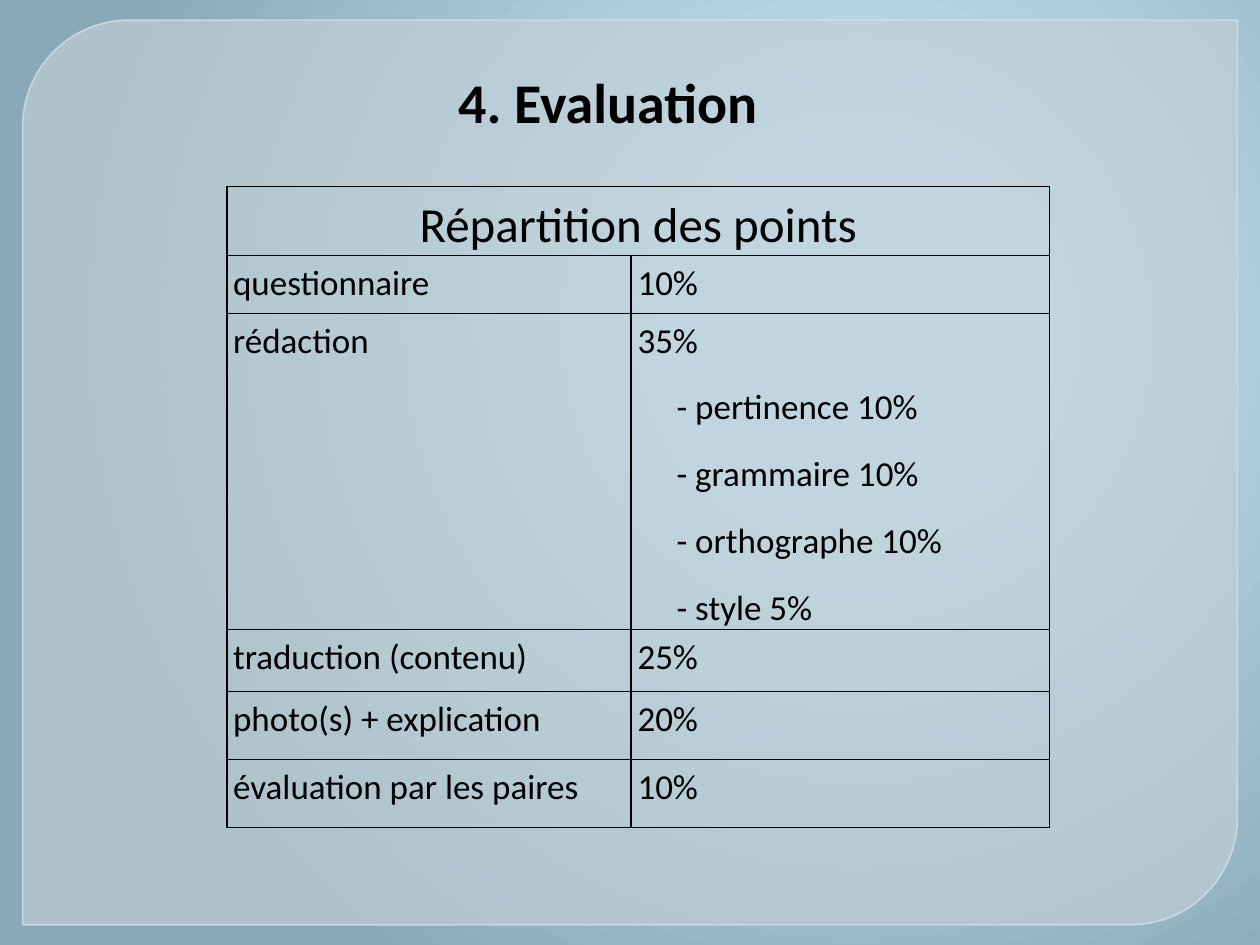
from dataclasses import dataclass

import pptx
import pptx.dml.color
import pptx.enum.shapes
import pptx.enum.text
import pptx.oxml
import pptx.oxml.ns
import pptx.util
from lxml import etree

Inches = pptx.util.Inches
Pt = pptx.util.Pt
RGB = pptx.dml.color.RGBColor.from_string
Align = pptx.enum.text.PP_ALIGN
Anchor = pptx.enum.text.MSO_ANCHOR
qn = pptx.oxml.ns.qn


@dataclass(frozen=True)
class Theme:
    font: str = "Calibri"
    ink: str = "000000"
    panel: str = "C2D0D7"
    panel_alpha: int = 65
    edge: str = "CEDEE6"
    edge_alpha: int = 88
    backdrop: tuple = ((0, "C3E4F5"), (20, "C1E1F1"), (100, "8AA9B8"))
    title_size: int = 32
    heading_size: int = 28
    body_size: int = 20


@dataclass(frozen=True)
class Criterion:
    name: str
    share: str
    height: float
    details: tuple = ()


THEME = Theme()
HEADING = "Répartition des points"
HEADING_HEIGHT = 0.54
COLUMNS = (3.21, 3.32)
CRITERIA = (
    Criterion("questionnaire", "10%", 0.46),
    Criterion("rédaction", "35%", 2.47, (
        "- pertinence 10%", "- grammaire 10%", "- orthographe 10%", "- style 5%")),
    Criterion("traduction (contenu)", "25%", 0.49),
    Criterion("photo(s) + explication", "20%", 0.54),
    Criterion("évaluation par les paires", "10%", 0.54),
)


def add_run(p, text: str, size: int, bold: bool = False) -> None:
    r = p.add_run()
    r.text = text
    r.font.name = THEME.font
    r.font.size = Pt(size)
    r.font.bold = bold
    r.font.color.rgb = RGB(THEME.ink)


def paint_background(s) -> None:
    stops = "".join(
        f'<a:gs pos="{pos * 1000}"><a:srgbClr val="{color}"/></a:gs>'
        for pos, color in THEME.backdrop)
    bg = pptx.oxml.parse_xml(
        f'<p:bg {pptx.oxml.ns.nsdecls("p", "a")}><p:bgPr>'
        f'<a:gradFill rotWithShape="1"><a:gsLst>{stops}</a:gsLst>'
        '<a:path path="circle"><a:fillToRect l="68000" t="35000" r="32000" b="65000"/>'
        '</a:path></a:gradFill><a:effectLst/></p:bgPr></p:bg>')
    s._element.cSld.insert(0, bg)


def set_alpha(fill_xml, percent: int) -> None:
    color = fill_xml.find(qn("a:srgbClr"))
    etree.SubElement(color, qn("a:alpha")).set("val", str(percent * 1000))


def add_panel(s) -> None:
    sp = s.shapes.add_shape(
        pptx.enum.shapes.MSO_SHAPE.ROUND_2_DIAG_RECTANGLE,
        Inches(0.18), Inches(0.16), Inches(9.64), Inches(7.18))
    sp.adjustments[0] = 0.118
    sp.adjustments[1] = 0
    sp.shadow.inherit = False
    sp.fill.solid()
    sp.fill.fore_color.rgb = RGB(THEME.panel)
    sp.line.color.rgb = RGB(THEME.edge)
    sp.line.width = Pt(0.87)
    props = sp._element.spPr
    set_alpha(props.find(qn("a:solidFill")), THEME.panel_alpha)
    set_alpha(props.find(qn("a:ln")).find(qn("a:solidFill")), THEME.edge_alpha)
    s.shapes._spTree.insert(2, sp._element)


def set_title(s, text: str) -> None:
    sp = s.shapes.title
    sp.left, sp.top, sp.width, sp.height = map(Inches, (3.52, 0.48, 2.61, 0.64))
    tf = sp.text_frame
    tf.word_wrap = False
    tf.auto_size = pptx.enum.text.MSO_AUTO_SIZE.NONE
    tf.vertical_anchor = Anchor.MIDDLE
    p = tf.paragraphs[0]
    p.alignment = Align.CENTER
    add_run(p, text, THEME.title_size, True)


def format_cell(cell) -> None:
    cell.margin_left = cell.margin_right = Inches(0.05)
    cell.margin_top = cell.margin_bottom = 0
    cell.vertical_anchor = Anchor.TOP
    cell.fill.background()
    props = cell._tc.get_or_add_tcPr()
    for i, side in enumerate(("lnL", "lnR", "lnT", "lnB")):
        props.insert(i, pptx.oxml.parse_xml(
            f'<a:{side} {pptx.oxml.ns.nsdecls("a")} w="{Pt(1)}"><a:solidFill>'
            f'<a:srgbClr val="{THEME.ink}"/></a:solidFill>'
            f'<a:prstDash val="solid"/></a:{side}>'))


def write_cell(cell, lines: tuple, size: int, align=Align.LEFT) -> None:
    tf = cell.text_frame
    for i, line in enumerate(lines):
        p = tf.add_paragraph() if i else tf.paragraphs[0]
        p.alignment = align
        p.line_spacing = 1.15
        p.space_after = Pt(10)
        if i:
            p._p.get_or_add_pPr().set("marL", str(Inches(0.31)))
        add_run(p, line, size)


def add_points_table(s) -> None:
    heights = (HEADING_HEIGHT, *(c.height for c in CRITERIA))
    table = s.shapes.add_table(
        len(heights), len(COLUMNS), Inches(1.8), Inches(1.48),
        Inches(sum(COLUMNS)), Inches(sum(heights))).table
    table.first_row = table.horz_banding = False
    for column, width in zip(table.columns, COLUMNS):
        column.width = Inches(width)
    for row, height in zip(table.rows, heights):
        row.height = Inches(height)
        for cell in row.cells:
            format_cell(cell)
    table.cell(0, 0).merge(table.cell(0, 1))
    write_cell(table.cell(0, 0), (HEADING,), THEME.heading_size, Align.CENTER)
    for i, c in enumerate(CRITERIA, 1):
        write_cell(table.cell(i, 0), (c.name,), THEME.body_size)
        write_cell(table.cell(i, 1), (c.share, *c.details), THEME.body_size)


def main() -> None:
    prs = pptx.Presentation()
    prs.slide_width, prs.slide_height = Inches(10), Inches(7.5)
    s = prs.slides.add_slide(prs.slide_layouts[5])
    paint_background(s)
    add_panel(s)
    set_title(s, "4. Evaluation")
    add_points_table(s)
    prs.save("out.pptx")


if __name__ == "__main__":
    main()
